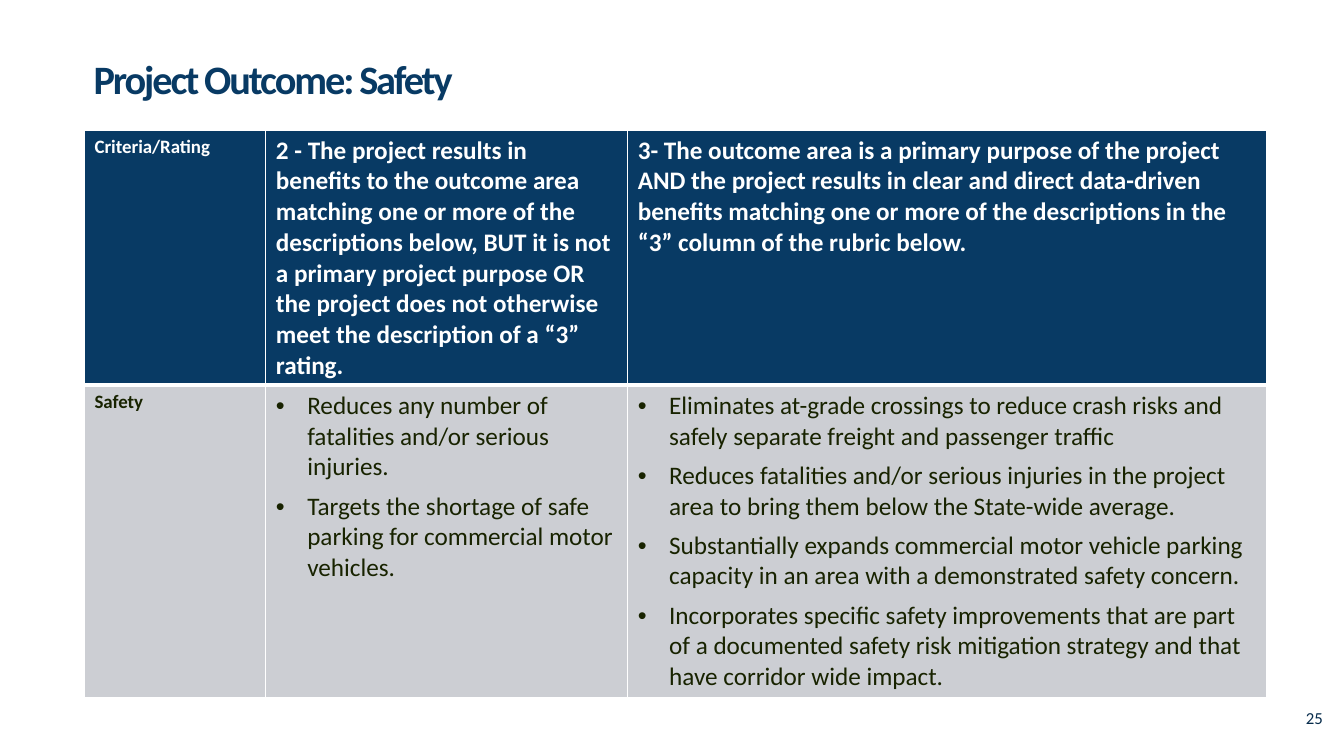
from pptx import Presentation
from pptx import util as u
from pptx.dml.color import RGBColor
from pptx.enum import text
from pptx.oxml import parse_xml
from pptx.oxml.ns import nsdecls

NAVY = RGBColor(0x08, 0x3A, 0x64)
DARK_NAVY = RGBColor(0x06, 0x2B, 0x4B)
INK = RGBColor(0x18, 0x23, 0x00)
GREY = RGBColor(0xCC, 0xCE, 0xD3)
WHITE = RGBColor(0xFF, 0xFF, 0xFF)

HEADER = [
    "Criteria/Rating",
    "2 - The project results in benefits to the outcome area matching one or more "
    "of the descriptions below, BUT it is not a primary project purpose OR the "
    "project does not otherwise meet the description of a “3” rating.",
    "3- The outcome area is a primary purpose of the project AND the project results "
    "in clear and direct data-driven benefits matching one or more of the "
    "descriptions in the “3” column of the rubric below.",
]
BENEFITS = [
    "Reduces any number of fatalities and/or serious injuries.",
    "Targets the shortage of safe parking for commercial motor vehicles.",
]
PRIMARY_BENEFITS = [
    "Eliminates at-grade crossings to reduce crash risks and safely separate "
    "freight and passenger traffic",
    "Reduces fatalities and/or serious injuries in the project area to bring them "
    "below the State-wide average.",
    "Substantially expands commercial motor vehicle parking capacity in an area "
    "with a demonstrated safety concern.",
    "Incorporates specific safety improvements that are part of a documented safety "
    "risk mitigation strategy and that have corridor wide impact.",
]


class SlideBuilder:
    """Holds the style and the current slide, and adds elements to it."""

    font = "Calibri"
    label_size, body_size = 13.5, 18

    def __init__(self, prs):
        self.s = prs.slides.add_slide(prs.slide_layouts[6])

    def run(self, p, words, size, color, bold=False):
        r = p.add_run()
        r.text = words
        r.font.name, r.font.size = self.font, u.Pt(size)
        r.font.bold, r.font.color.rgb = bold, color
        return r

    def textbox(self, box, words, size, color, bold=False):
        sp = self.s.shapes.add_textbox(*(u.Cm(v) for v in box))
        tf = sp.text_frame
        tf.word_wrap = True
        return tf, self.run(tf.paragraphs[0], words, size, color, bold)

    def title(self, box, words):
        tf, r = self.textbox(box, words, 28.8, NAVY, True)
        tf.margin_left = tf.margin_right = tf.margin_top = tf.margin_bottom = 0
        tf.vertical_anchor = text.MSO_ANCHOR.MIDDLE
        tf.paragraphs[0].line_spacing = 0.9
        r.font._element.set("spc", "-150")

    def bullet(self, p):
        pPr = p._p.get_or_add_pPr()
        pPr.set("marL", str(u.Cm(0.79)))
        pPr.set("indent", str(-u.Cm(0.79)))
        pPr.append(parse_xml(f'<a:buFont {nsdecls("a")} typeface="Arial"/>'))
        pPr.append(parse_xml(f'<a:buChar {nsdecls("a")} char="•"/>'))
        p.space_after = u.Pt(6)

    def borders(self, cell, widths):
        tcPr = cell._tc.get_or_add_tcPr()
        for side, width in zip("LRTB", widths):
            tcPr.append(parse_xml(
                f'<a:ln{side} {nsdecls("a")} w="{u.Pt(width)}"><a:solidFill>'
                f'<a:srgbClr val="{WHITE}"/></a:solidFill></a:ln{side}>'))

    def cell(self, cell, items, size, color, fill, widths, bold=False, bullets=False):
        self.borders(cell, widths)
        cell.fill.solid()
        cell.fill.fore_color.rgb = fill
        tf = cell.text_frame
        for i, words in enumerate(items):
            p = tf.add_paragraph() if i else tf.paragraphs[0]
            if bullets:
                self.bullet(p)
            self.run(p, words, size, color, bold)

    def rubric(self, left, top, widths, heights, header, body):
        tbl = self.s.shapes.add_table(
            2, len(widths), u.Cm(left), u.Cm(top),
            u.Cm(sum(widths)), u.Cm(sum(heights))).table
        for row, height in zip(tbl.rows, heights):
            row.height = u.Cm(height)
        for c, width in enumerate(widths):
            tbl.columns[c].width = u.Cm(width)
            label = c == 0
            size = self.label_size if label else self.body_size
            self.cell(tbl.cell(0, c), [header[c]], size, WHITE, NAVY,
                      (1, 1, 1, 3), bold=True)
            self.cell(tbl.cell(1, c), body[c], size, INK, GREY,
                      (1, 1, 3, 1), bold=label, bullets=not label)


def main():
    prs = Presentation()
    prs.slide_width, prs.slide_height = u.Cm(33.87), u.Cm(19.05)
    slide = SlideBuilder(prs)
    slide.title((2.36, 1.52, 20.75, 1.07), "Project Outcome: Safety")
    slide.textbox((32.66, 17.7, 1.2, 1.2), "25", 12, DARK_NAVY)
    slide.rubric(2.13, 3.28, (4.57, 9.12, 16.1), (6.43, 7.87), HEADER,
                 [["Safety"], BENEFITS, PRIMARY_BENEFITS])
    prs.save("out.pptx")


if __name__ == "__main__":
    main()
